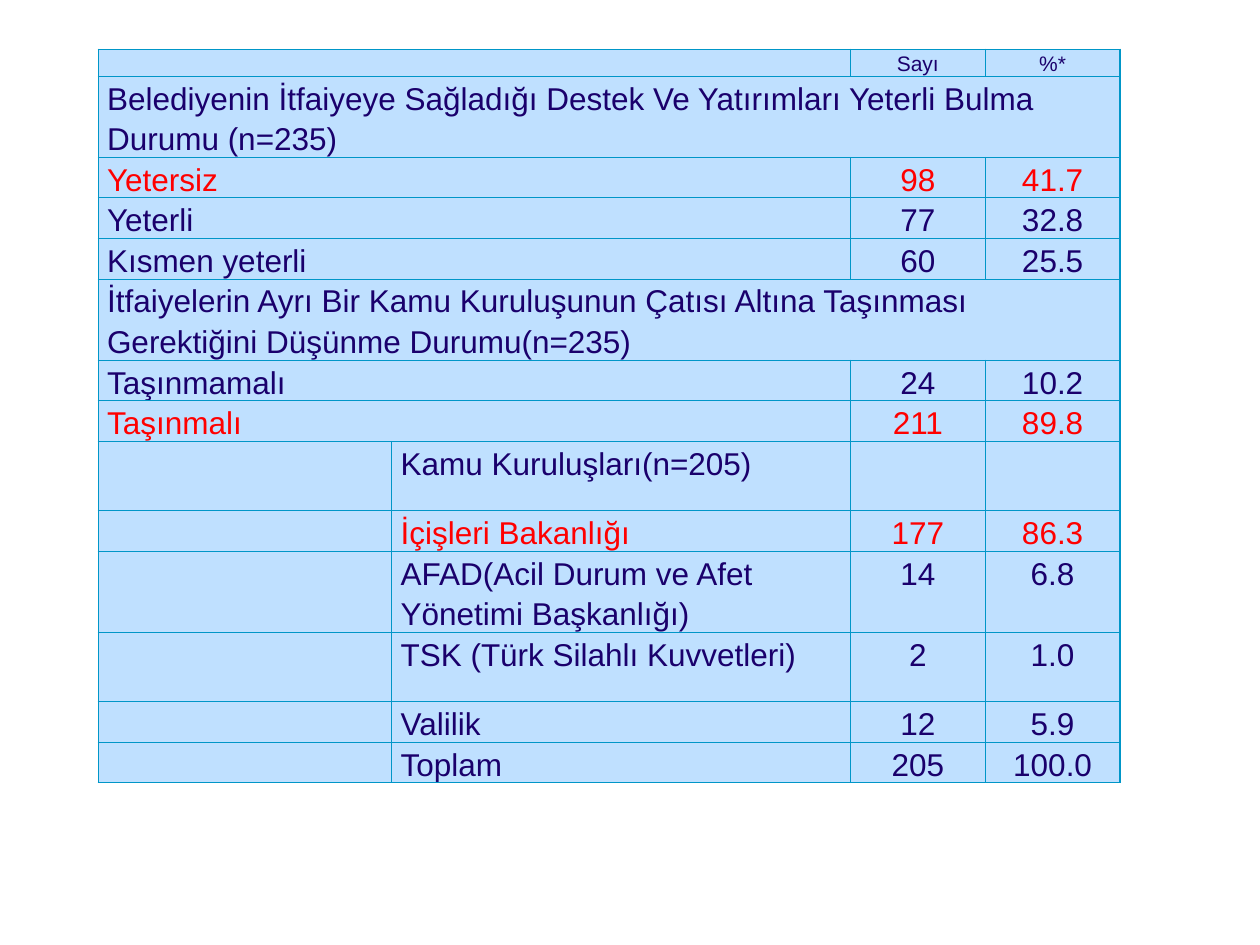
import pptx
import pptx.util
import pptx.dml.color
import pptx.enum.text
import lxml.etree

Inches, Pt = pptx.util.Inches, pptx.util.Pt
Color = pptx.dml.color.RGBColor.from_string
Align = pptx.enum.text.PP_ALIGN

# Colours and type sizes
THEME = {
    "font": "Arial", "ink": "1A006C", "mark": "FF0000",
    "fill": "BFE0FF", "line": "0096C8", "edge": 0.75,
    "head": 12, "body": 18, "lead": 1.15,
}

# Rows: height, text cells, marked in red; a None cell is covered by a span
ROWS = [
    (0.18, ["", None, "Sayı", "%*"], False),
    (0.55, ["Belediyenin İtfaiyeye Sağladığı Destek Ve Yatırımları Yeterli "
            "Bulma Durumu (n=235)", None, None, None], False),
    (0.26, ["Yetersiz", None, "98", "41.7"], True),
    (0.26, ["Yeterli", None, "77", "32.8"], False),
    (0.26, ["Kısmen yeterli", None, "60", "25.5"], False),
    (0.55, ["İtfaiyelerin Ayrı Bir Kamu Kuruluşunun Çatısı Altına Taşınması "
            "Gerektiğini Düşünme Durumu(n=235)", None, None, None], False),
    (0.26, ["Taşınmamalı", None, "24", "10.2"], False),
    (0.26, ["Taşınmalı", None, "211", "89.8"], True),
    (0.55, ["", "Kamu Kuruluşları(n=205)", "", ""], False),
    (0.28, ["", "İçişleri Bakanlığı", "177", "86.3"], True),
    (0.55, ["", "AFAD(Acil Durum ve Afet Yönetimi Başkanlığı)", "14", "6.8"], False),
    (0.55, ["", "TSK (Türk Silahlı Kuvvetleri)", "2", "1.0"], False),
    (0.28, ["", "Valilik", "12", "5.9"], False),
    (0.28, ["", "Toplam", "205", "100.0"], False),
]
COLS = [2.33, 3.64, 1.07, 1.07]


class Deck:
    def __init__(self, theme):
        self.theme = theme
        self.file = pptx.Presentation()
        self.file.slide_width, self.file.slide_height = Inches(10), Inches(7.5)
        self.slide = self.file.slides.add_slide(self.file.slide_layouts[6])

    def border(self, cell):
        """Draw a thin line on all four sides of a cell."""
        props = cell._tc.get_or_add_tcPr()
        ns = "{http://schemas.openxmlformats.org/drawingml/2006/main}"
        for spot, side in enumerate(("lnL", "lnR", "lnT", "lnB")):
            line = lxml.etree.Element(ns + side, w=str(Pt(self.theme["edge"])))
            fill = lxml.etree.SubElement(line, ns + "solidFill")
            lxml.etree.SubElement(fill, ns + "srgbClr", val=self.theme["line"])
            props.insert(spot, line)

    def cell(self, cell, text, size, color, align):
        """Fill, frame and write one cell."""
        look = self.theme
        pad = {"margin_left": 0.07, "margin_right": 0.07,
               "margin_top": 0, "margin_bottom": 0}
        for name, value in pad.items():
            setattr(cell, name, Inches(value))
        cell.fill.solid()
        cell.fill.fore_color.rgb = Color(look["fill"])
        self.border(cell)
        para = cell.text_frame.paragraphs[0]
        para.alignment, para.line_spacing = align, look["lead"]
        if not text:
            # An empty cell takes its height from the end mark
            para._p.get_or_add_endParaRPr().set("sz", str(size * 100))
            return
        run = para.add_run()
        run.text = text
        for name, value in {"name": look["font"], "size": Pt(size)}.items():
            setattr(run.font, name, value)
        run.font.color.rgb = Color(color)

    def table(self, left, top, wide, high, cols, rows):
        """Add a table; each None cell joins the cell to its left."""
        look = self.theme
        grid = self.slide.shapes.add_table(
            len(rows), len(cols), Inches(left), Inches(top),
            Inches(wide), Inches(high)).table
        for col, size in zip(grid.columns, cols):
            col.width = Inches(size)
        for r, (tall, texts, mark) in enumerate(rows):
            grid.rows[r].height = Inches(tall)
            size = look["body"] if r else look["head"]
            color = look["mark"] if mark else look["ink"]
            for c, text in enumerate(texts):
                align = Align.LEFT if c < 2 else Align.CENTER
                self.cell(grid.cell(r, c), text, size, color, align)
            span = 1 + texts.count(None)
            if span > 1:
                grid.cell(r, 0).merge(grid.cell(r, span - 1))

    def save(self):
        self.file.save("out.pptx")


def main():
    deck = Deck(THEME)
    # Survey results
    deck.table(0.78, 0.39, 8.13, 5.96, COLS, ROWS)
    deck.save()


if __name__ == "__main__":
    main()
